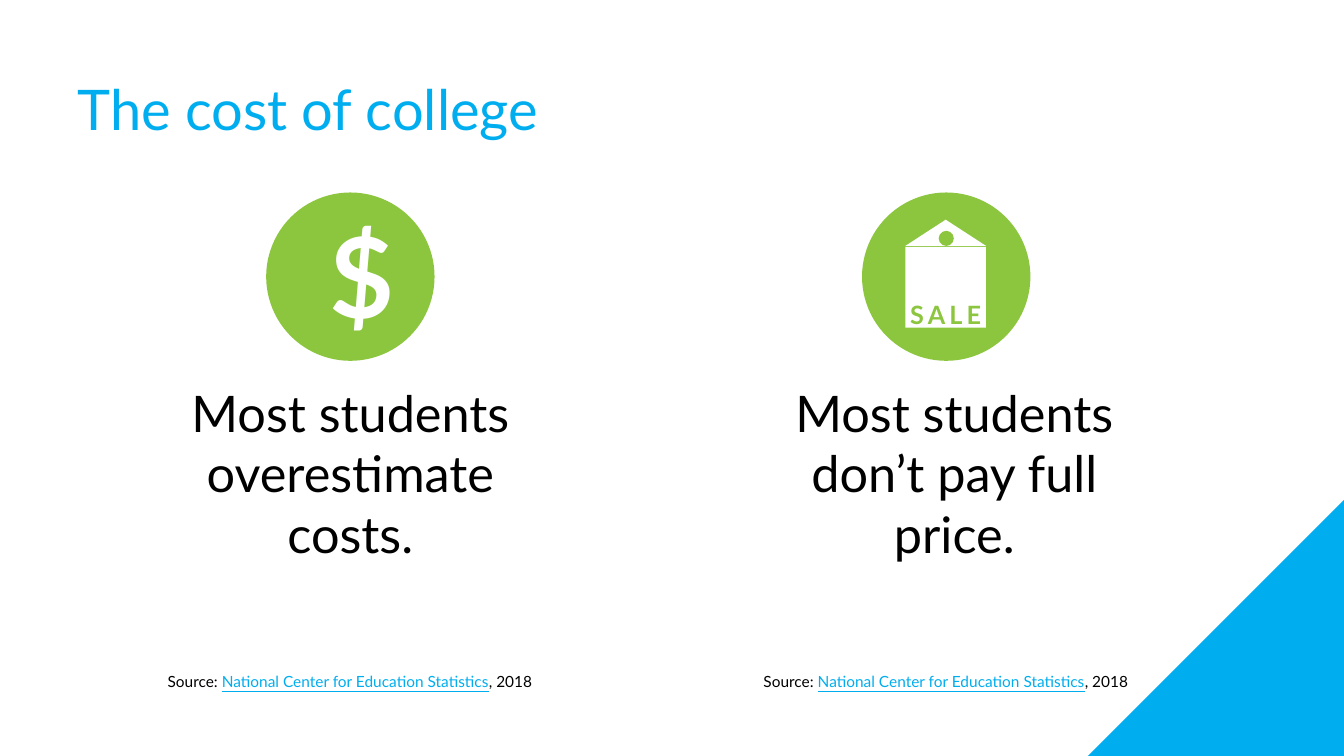
from pptx import Presentation
from pptx.dml.color import RGBColor
from pptx.enum.shapes import MSO_SHAPE as SHAPE
from pptx.enum.text import MSO_ANCHOR as ANCHOR, PP_ALIGN as ALIGN
from pptx.util import Inches, Pt

BLUE, GREEN, WHITE, BLACK = "00AEEF", "8CC63F", "FFFFFF", "000000"


def color(value):
    return RGBColor.from_string(value)


def add_filled(shapes, kind, left, top, width, height, fill):
    shape = shapes.add_shape(kind, Inches(left), Inches(top), Inches(width), Inches(height))
    shape.shadow.inherit = False
    shape.fill.solid()
    shape.fill.fore_color.rgb = color(fill)
    shape.line.fill.background()
    return shape


presentation = Presentation()
presentation.slide_width = Inches(13.33)
presentation.slide_height = Inches(7.5)
slide = presentation.slides.add_slide(presentation.slide_layouts[5])

# Title
title = slide.shapes.title
title.left, title.top = Inches(0.67), Inches(0.76)
title.width, title.height = Inches(12), Inches(0.8)
title.text_frame.text = "The cost of college"
title.text_frame.vertical_anchor = ANCHOR.TOP
paragraph = title.text_frame.paragraphs[0]
paragraph.alignment = ALIGN.LEFT
paragraph.line_spacing = 0.9
font = paragraph.runs[0].font
font.name, font.size = "Lato", Pt(40)
font.color.rgb = color(BLUE)

# Corner triangle
corner = add_filled(slide.shapes, SHAPE.RIGHT_TRIANGLE, 10.79, 4.96, 2.54, 2.54, BLUE)
corner.rotation = 270

# Icon circles
for left in (2.64, 8.55):
    add_filled(slide.shapes, SHAPE.OVAL, left, 1.91, 1.67, 1.67, GREEN)

# Price tag
tag = slide.shapes.add_group_shape()
add_filled(tag.shapes, SHAPE.RECTANGLE, 8.98, 2.45, 0.8, 0.8, WHITE)
add_filled(tag.shapes, SHAPE.ISOSCELES_TRIANGLE, 8.98, 2.18, 0.8, 0.26, WHITE)
add_filled(tag.shapes, SHAPE.OVAL, 9.31, 2.29, 0.15, 0.15, GREEN)

# Text boxes: position, size, bold, letter spacing, then runs of text and colour
source = [
    ("Source: ", BLACK),
    ("National Center for Education Statistics", BLUE),
    (", 2018", BLACK),
]
texts = [
    (1.43, 6.62, 4.08, 0.29, 11, False, 0, source),
    (7.34, 6.62, 4.08, 0.29, 11, False, 0, source),
    (1.52, 3.74, 3.91, 1.92, 36, False, 0, [("Most students overestimate costs.", BLACK)]),
    (7.51, 3.74, 3.91, 1.92, 36, False, 0, [("Most students don’t pay full price.", BLACK)]),
    (3.17, 2, 0.61, 1.45, 80, True, 0, [("$", WHITE)]),
    (8.38, 2.92, 2, 0.4, 18, True, 3, [("SALE", GREEN)]),
]
for left, top, width, height, size, bold, spacing, runs in texts:
    box = slide.shapes.add_textbox(Inches(left), Inches(top), Inches(width), Inches(height))
    box.text_frame.word_wrap = True
    paragraph = box.text_frame.paragraphs[0]
    paragraph.alignment = ALIGN.CENTER
    for text, text_color in runs:
        run = paragraph.add_run()
        run.text = text
        run.font.name, run.font.size = "Lato", Pt(size)
        run.font.bold = bold
        run.font.underline = text_color == BLUE
        run.font.color.rgb = color(text_color)
        if spacing:
            run.font._element.set("spc", str(spacing * 100))
        # White text keeps the green of its circle behind it
        if text_color == WHITE:
            box.fill.solid()
            box.fill.fore_color.rgb = color(GREEN)

presentation.save("out.pptx")
